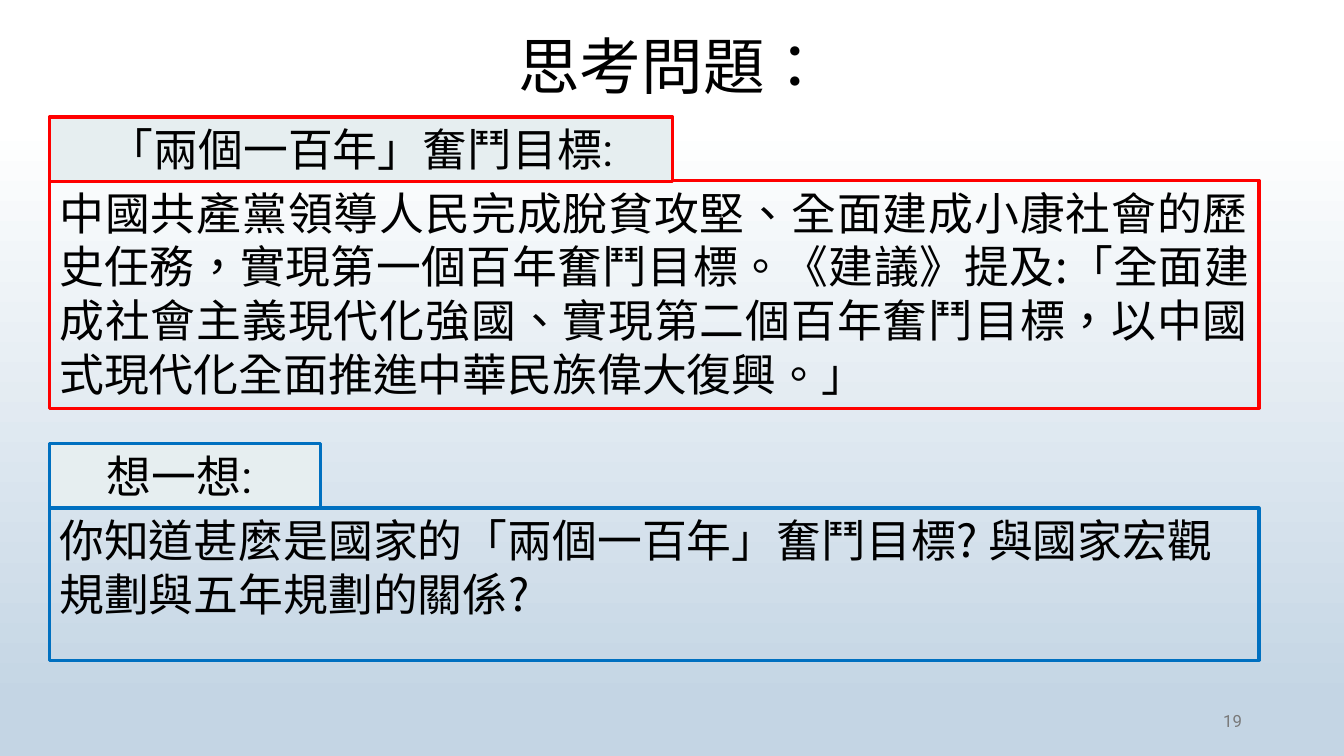
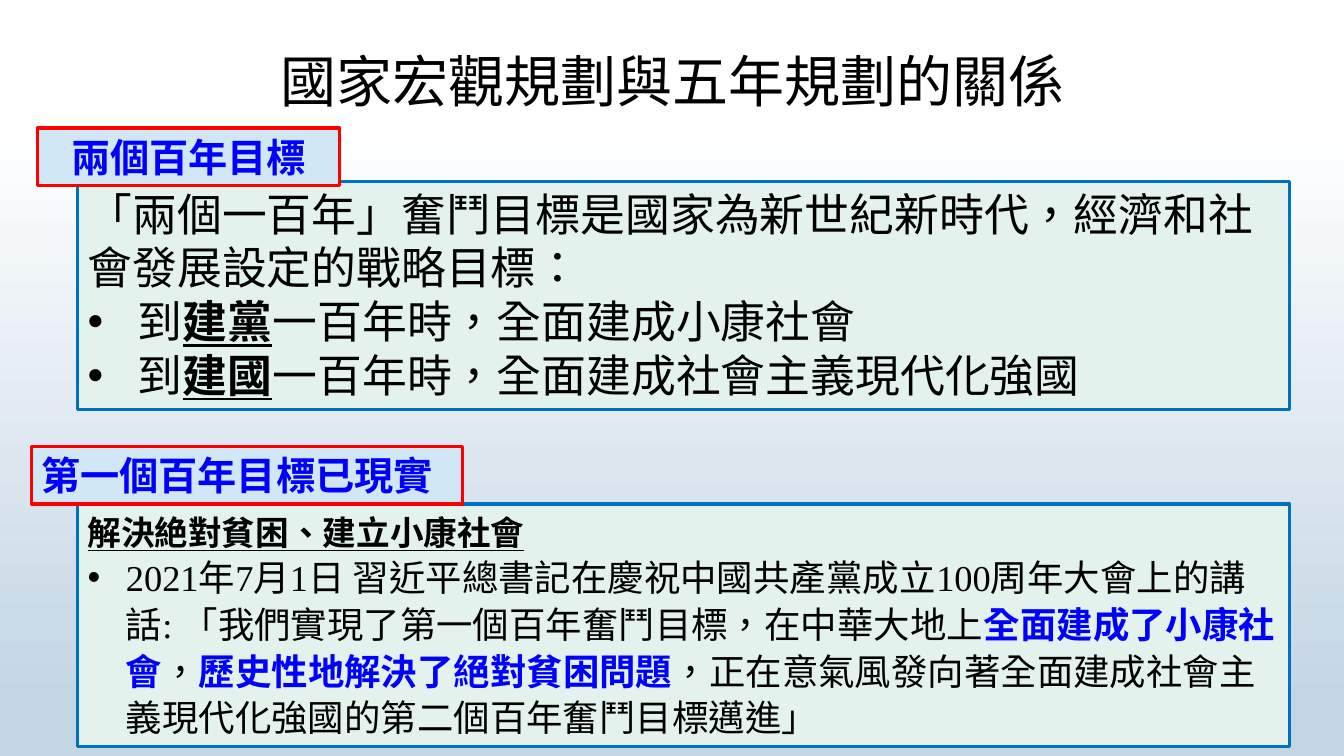
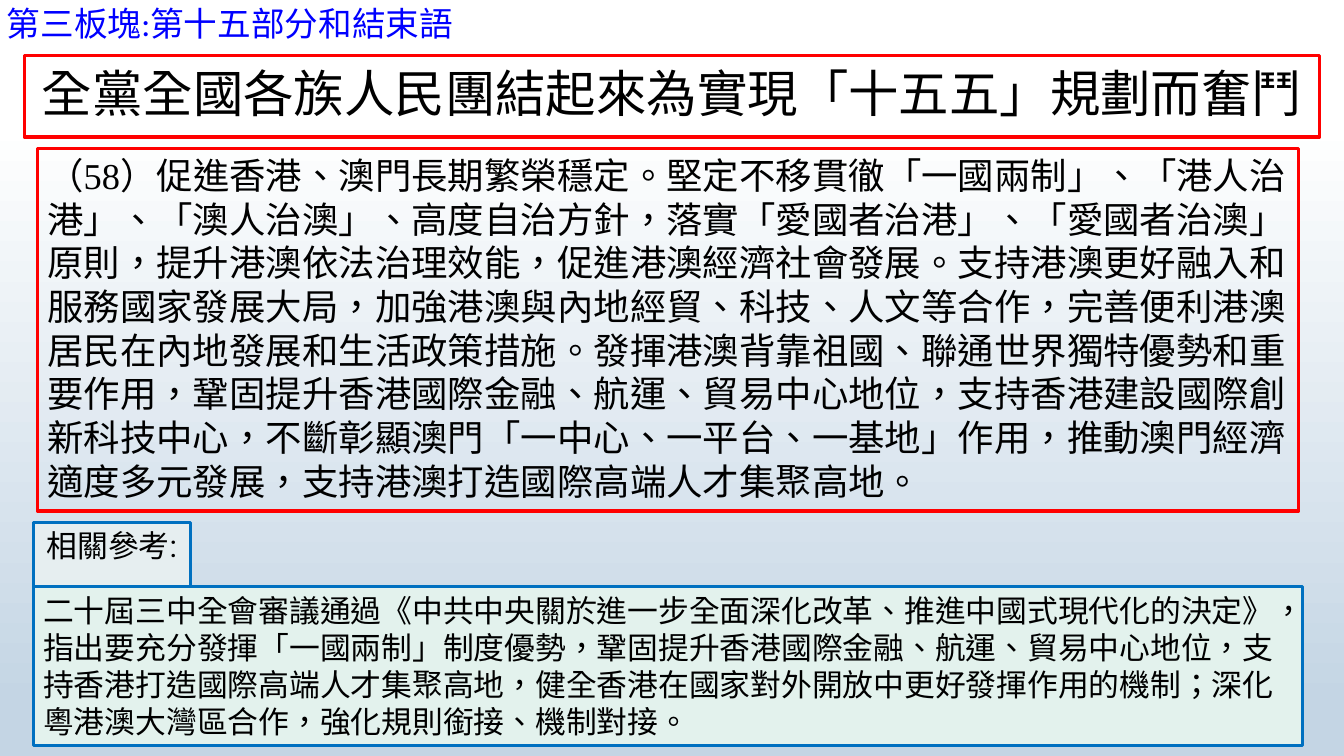
from dataclasses import dataclass, field
from typing import Any, NamedTuple, Optional

import lxml.etree
import pptx
import pptx.dml.color
import pptx.enum.lang
import pptx.enum.shapes
import pptx.enum.text
import pptx.oxml.ns
import pptx.slide
import pptx.util

RGBColor = pptx.dml.color.RGBColor
Align = pptx.enum.text.PP_ALIGN
Anchor = pptx.enum.text.MSO_ANCHOR

# Shared look
SLIDE_WIDTH = pptx.util.Inches(13.33)
SLIDE_HEIGHT = pptx.util.Inches(7.5)
BLACK = RGBColor(0x00, 0x00, 0x00)
WHITE = RGBColor(0xFF, 0xFF, 0xFF)
GREY = RGBColor(0x79, 0x79, 0x79)
RED = RGBColor(0xFF, 0x00, 0x00)
BLUE = RGBColor(0x00, 0x70, 0xC0)
BRIGHT_BLUE = RGBColor(0x00, 0x00, 0xFF)
SKY = RGBColor(0xC4, 0xD5, 0xE4)
PALE_GREY = RGBColor(0xE6, 0xEE, 0xF0)
PALE_GREEN = RGBColor(0xE3, 0xF2, 0xED)
PALE_BLUE = RGBColor(0xD1, 0xE7, 0xF6)
CJK, SERIF, SANS, LABEL = "Noto Sans CJK SC", "Times New Roman", "Calibri", "Roboto"
BACKGROUND_STOPS = ((0.16, WHITE), (0.93, SKY))
BORDER_WIDTH = pptx.util.Pt(2.25)
STRONG = {"bold": True, "underline": True}
KEYWORD = {"name": SANS, "color": BRIGHT_BLUE, "bold": True}


class Area(NamedTuple):
    """Percentages of the slide's width and height."""
    left: float
    top: float
    width: float
    height: float


class Piece(NamedTuple):
    """A run of text with the font values that differ from its box."""
    text: str
    font: dict[str, Any] = {}


@dataclass
class Line:
    pieces: list[Piece]
    format: dict[str, Any] = field(default_factory=dict)
    bullet_indent: float = 0


@dataclass
class Box:
    area: Area
    lines: list[Line]
    size: float
    name: str = CJK
    color: RGBColor = BLACK
    bold: bool = False
    border: Optional[RGBColor] = None
    fill: Optional[RGBColor] = None
    anchor: Any = Anchor.TOP


def line(text: str, **values: Any) -> Line:
    return Line([Piece(text)], values)


def title(text: str, area: Area, size: float, **values: Any) -> Box:
    heading = line(text, alignment=Align.CENTER, line_spacing=0.9)
    return Box(area, [heading], size, anchor=Anchor.MIDDLE, **values)


def label(text: str, area: Area, border: RGBColor, size: float = 32) -> Box:
    return Box(area, [line(text, alignment=Align.CENTER)], size, LABEL, border=border, fill=PALE_GREY)


def goal_label(text: str, area: Area, alignment: Any) -> Box:
    return Box(area, [line(text, alignment=alignment)], 28, SANS, BRIGHT_BLUE, True, RED, PALE_BLUE)


# Drawing
def add_bullet(paragraph: Any, indent: float) -> None:
    properties = paragraph._p.get_or_add_pPr()
    properties.set("marL", str(pptx.util.Inches(indent)))
    properties.set("indent", str(-pptx.util.Inches(indent)))
    for tag, key, value in (("a:buFont", "typeface", "Arial"), ("a:buChar", "char", "•")):
        lxml.etree.SubElement(properties, pptx.oxml.ns.qn(tag)).set(key, value)


def add_piece(paragraph: Any, piece: Piece, box: Box) -> None:
    run = paragraph.add_run()
    run.text = piece.text
    values = {"name": box.name, "bold": box.bold, "color": box.color,
              "size": pptx.util.Pt(box.size),
              "language_id": pptx.enum.lang.MSO_LANGUAGE_ID.CHINESE_HONG_KONG_SAR}
    values |= piece.font
    run.font.color.rgb = values.pop("color")
    for key, value in values.items():
        setattr(run.font, key, value)
    east_asian = lxml.etree.SubElement(run._r.get_or_add_rPr(), pptx.oxml.ns.qn("a:ea"))
    east_asian.set("typeface", CJK)


def draw_box(slide: pptx.slide.Slide, box: Box) -> None:
    left, width = (round(SLIDE_WIDTH * share / 100) for share in (box.area.left, box.area.width))
    top, height = (round(SLIDE_HEIGHT * share / 100) for share in (box.area.top, box.area.height))
    if box.border is None:
        shape = slide.shapes.add_textbox(left, top, width, height)
    else:
        rectangle = pptx.enum.shapes.MSO_SHAPE.RECTANGLE
        shape = slide.shapes.add_shape(rectangle, left, top, width, height)
        shape.shadow.inherit = False
        shape.line.color.rgb = box.border
        shape.line.width = BORDER_WIDTH
        if box.fill is None:
            shape.fill.background()
        else:
            shape.fill.solid()
            shape.fill.fore_color.rgb = box.fill
    frame = shape.text_frame
    frame.word_wrap = True
    frame.vertical_anchor = box.anchor
    for index, text_line in enumerate(box.lines):
        paragraph = frame.add_paragraph() if index else frame.paragraphs[0]
        if text_line.bullet_indent:
            add_bullet(paragraph, text_line.bullet_indent)
        for key, value in ({"alignment": Align.LEFT} | text_line.format).items():
            setattr(paragraph, key, value)
        for piece in text_line.pieces:
            add_piece(paragraph, piece, box)


def set_background(presentation: Any) -> None:
    fill = presentation.slide_master.background.fill
    fill.gradient()
    fill.gradient_angle = 270
    for stop, (position, color) in zip(fill.gradient_stops, BACKGROUND_STOPS):
        stop.position = position
        stop.color.rgb = color


# Slide contents
QUESTIONS = [
    title("思考問題：", Area(6.9, 3.2, 86.25, 11.87), 44),
    Box(Area(70.65, 92.67, 22.5, 5.33), [line("19", alignment=Align.RIGHT)], 12, LABEL, GREY,
        anchor=Anchor.MIDDLE),
    Box(Area(3.68, 67.2, 90, 20.13),
        [line("你知道甚麼是國家的「兩個一百年」奮鬥目標? 與國家宏觀規劃與五年規劃的關係?")],
        32, border=BLUE),
    Box(Area(3.68, 23.87, 90, 30.13),
        [line("中國共產黨領導人民完成脫貧攻堅、全面建成小康社會的歷史任務，實現第一個百年奮鬥目標。"
              "《建議》提及:「全面建成社會主義現代化強國、實現第二個百年奮鬥目標，"
              "以中國式現代化全面推進中華民族偉大復興。」", alignment=Align.JUSTIFY)],
        32, border=RED),
    label("「兩個一百年」奮鬥目標:", Area(3.68, 15.47, 46.36, 8.53), RED),
    label("想一想: ", Area(3.68, 58.67, 20.18, 8.53), BLUE),
]

GOALS = [
    title("國家宏觀規劃與五年規劃的關係", Area(6.9, 5.33, 86.25, 11.6), 40),
    Box(Area(5.78, 24, 90.17, 30.13),
        [line("「兩個一百年」奮鬥目標是國家為新世紀新時代，經濟和社會發展設定的戰略目標：")]
        + [Line([Piece("到"), Piece(event, STRONG), Piece(f"一百年時，全面建成{goal}")],
                bullet_indent=0.5)
           for event, goal in (("建黨", "小康社會"), ("建國", "社會主義現代化強國"))],
        32, border=BLUE, fill=PALE_GREEN),
    Box(Area(5.78, 66.67, 90.17, 32.13),
        [Line([Piece("解決絶對貧困、建立小康社會",
                     STRONG | {"name": CJK, "size": pptx.util.Pt(24)})],
              {"line_spacing": 1.07}),
         Line([Piece("2021年7月1日 習近平總書記在慶祝中國共產黨成立100周年大會上的講話: "
                     "「我們實現了第一個百年奮鬥目標，在中華大地上"),
               Piece("全面建成了小康社會", KEYWORD),
               Piece("，"),
               Piece("歷史性地解決了絕對貧困問題", KEYWORD),
               Piece("，正在意氣風發向著全面建成社會主義現代化強國的第二個百年奮鬥目標邁進」")],
              {"line_spacing": 1.07}, 0.38)],
        26, SERIF, border=BLUE, fill=PALE_GREEN),
    goal_label("兩個百年目標", Area(2.78, 16.93, 22.5, 7.6), Align.CENTER),
    goal_label("第一個百年目標已現實", Area(2.33, 59.07, 32.11, 7.6), Align.LEFT),
]

CONCLUSION = [
    Box(Area(2.78, 19.6, 93.85, 48),
        [Line([Piece("（"), Piece("58", {"name": SERIF}),
               Piece("）促進香港、澳門長期繁榮穩定。堅定不移貫徹「一國兩制」、「港人治港」、「澳人治澳」、"
                     "高度自治方針，落實「愛國者治港」、「愛國者治澳」原則，提升港澳依法治理效能，"
                     "促進港澳經濟社會發展。支持港澳更好融入和服務國家發展大局，"
                     "加強港澳與內地經貿、科技、人文等合作，完善便利港澳居民在內地發展和生活政策措施。"
                     "發揮港澳背靠祖國、聯通世界獨特優勢和重要作用，"
                     "鞏固提升香港國際金融、航運、貿易中心地位，支持香港建設國際創新科技中心，"
                     "不斷彰顯澳門「一中心、一平台、一基地」作用，推動澳門經濟適度多元發展，"
                     "支持港澳打造國際高端人才集聚高地。")],
              {"space_after": pptx.util.Pt(8)})],
        26, border=RED),
    title("全黨全國各族人民團結起來為實現「十五五」規劃而奮鬥", Area(1.8, 7.33, 96.4, 10.8), 36,
          border=RED),
    title("第三板塊:第十五部分和結束語", Area(-1.95, 0.27, 38.11, 6.13), 24,
          name=SANS, color=BRIGHT_BLUE),
    Box(Area(2.48, 77.6, 94.45, 21.07),
        [line("二十屆三中全會審議通過《中共中央關於進一步全面深化改革、推進中國式現代化的決定》，"
              "指出要充分發揮「一國兩制」制度優勢，鞏固提升香港國際金融、航運、貿易中心地位，"
              "支持香港打造國際高端人才集聚高地，健全香港在國家對外開放中更好發揮作用的機制；"
              "深化粵港澳大灣區合作，強化規則銜接、機制對接。")],
        22, border=BLUE, fill=PALE_GREEN),
    label("相關參考:", Area(2.48, 69.07, 11.7, 8.53), BLUE, 22),
]


def main() -> None:
    presentation = pptx.Presentation()
    presentation.slide_width = SLIDE_WIDTH
    presentation.slide_height = SLIDE_HEIGHT
    set_background(presentation)
    for boxes in (QUESTIONS, GOALS, CONCLUSION):
        slide = presentation.slides.add_slide(presentation.slide_layouts[6])
        for box in boxes:
            draw_box(slide, box)
    presentation.save("out.pptx")


if __name__ == "__main__":
    main()
